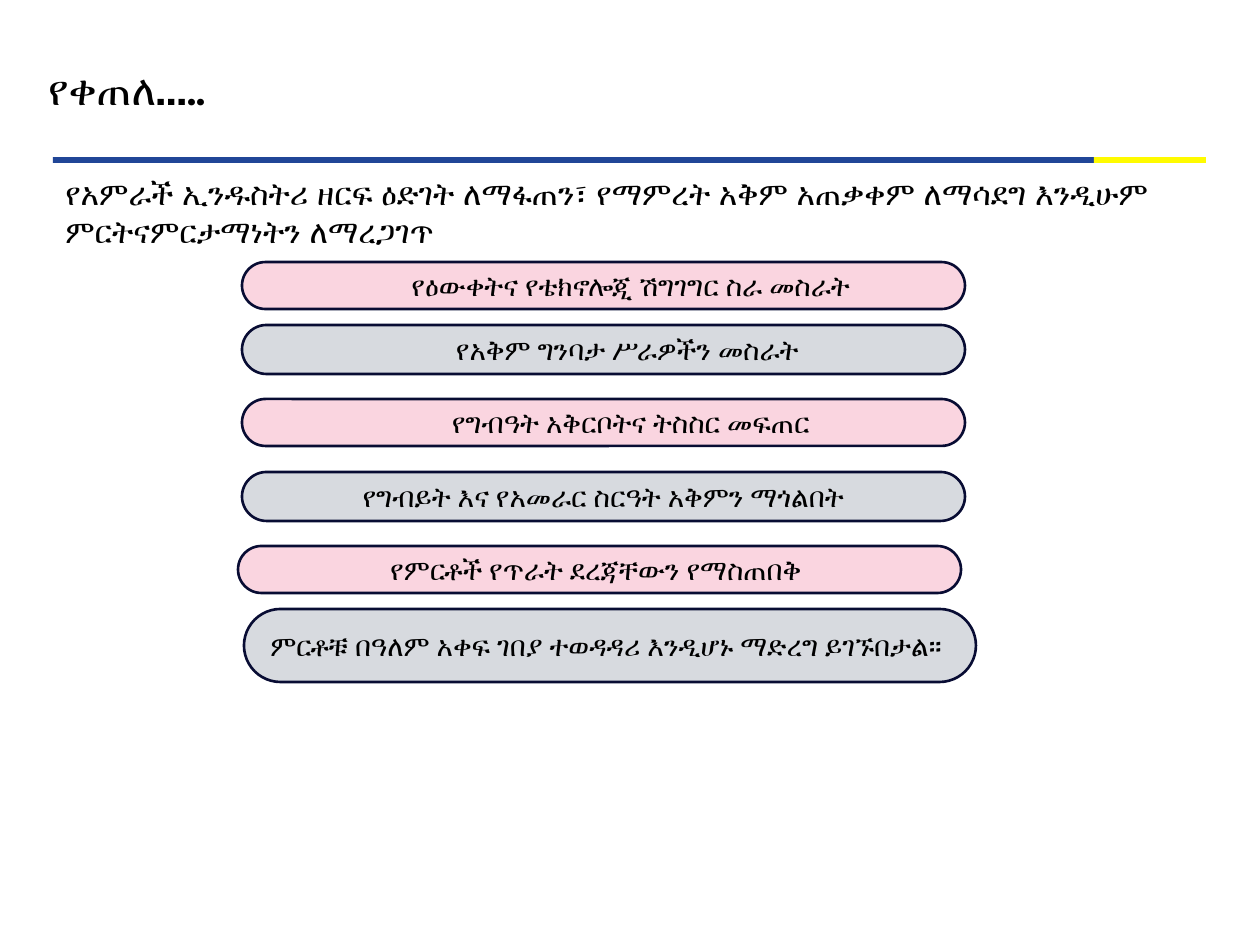
from dataclasses import dataclass

from pptx import Presentation
from pptx.dml.color import RGBColor
from pptx.enum.shapes import MSO_SHAPE
from pptx.enum.text import MSO_ANCHOR, PP_ALIGN
from pptx.util import Emu, Pt

EMU_PER_PX = 914400 / 126
RECTANGLE = MSO_SHAPE.RECTANGLE
ROUNDED = MSO_SHAPE.ROUNDED_RECTANGLE
MIDDLE = MSO_ANCHOR.MIDDLE
CENTER = PP_ALIGN.CENTER


@dataclass(frozen=True)
class Theme:
    ink: str = "000000"
    blue: str = "204697"
    yellow: str = "FFFB00"
    outline: str = "080C33"
    pill_fills: tuple = ("FAD5E0", "D7DADF")
    main_font: str = "Karla"
    condensed_font: str = "Roboto Condensed"
    title_size: int = 24
    heading_size: int = 18
    pill_size: int = 16
    outline_width: float = 1.5


THEME = Theme()

HEADING = [
    ("የ", THEME.main_font),
    ("አምራች ኢንዱስትሪ ", THEME.condensed_font),
    ("ዘር", THEME.main_font),
    ("ፍ ዕድገት ለማፋጠን፣ የማምረት አቅም አጠቃቀም ለማሳደግ እንዲሁም ", THEME.condensed_font),
    ("ምርትናምርታማነትን ለማረጋገጥ", THEME.main_font),
]

# text, left, top, width, height, left indent
PILLS = [
    (" የዕውቀትና የቴክኖሎጂ ሽግገግር ስራ መስራት", 242, 262, 723, 47, 48),
    ("የአቅም ግንባታ ሥራዎችን መስራት", 242, 325, 723, 49, 48),
    (" የግብዓት አቅርቦትና ትስስር መፍጠር", 242, 399, 723, 47, 48),
    (" የግብይት እና የአመራር ስርዓት አቅምን ማጎልበት ", 242, 472, 723, 49, 0),
    ("የምርቶች የጥራት ደረጃቸውን የማስጠበቅ ", 238, 546, 723, 47, 0),
    ("ምርቶቹ በዓለም አቀፍ ገበያ ተወዳዳሪ እንዲሆኑ ማድረግ ይገኙበታል፡፡ ", 244, 609, 732, 73, 0),
]


def px(length):
    return Emu(round(length * EMU_PER_PX))


def style_span(span, size, font=THEME.main_font, bold=False):
    span.font.name = font
    span.font.size = Pt(size)
    span.font.bold = bold
    span.font.color.rgb = RGBColor.from_string(THEME.ink)


def add_shape(page, kind, bounds, fill):
    shape = page.shapes.add_shape(kind, *map(px, bounds))
    shape.shadow.inherit = False
    shape.fill.solid()
    shape.fill.fore_color.rgb = RGBColor.from_string(fill)
    shape.line.fill.background()
    return shape


def add_text_box(page, bounds):
    box = page.shapes.add_textbox(*map(px, bounds))
    box.text_frame.word_wrap = True
    return box.text_frame


def add_title(page, text):
    frame = add_text_box(page, (48, 35, 1041, 113))
    frame.vertical_anchor = MIDDLE
    frame.margin_left = frame.margin_right = 0
    frame.margin_top = frame.margin_bottom = 0
    frame.text = text
    para = frame.paragraphs[0]
    para.line_spacing = 0.9
    style_span(para.runs[0], THEME.title_size, bold=True)


def add_heading(page, pieces):
    para = add_text_box(page, (53, 168, 1197, 89)).paragraphs[0]
    for text, font in pieces:
        span = para.add_run()
        span.text = text
        style_span(span, THEME.heading_size, font, bold=True)


def add_pill(page, text, bounds, indent, fill):
    pill = add_shape(page, ROUNDED, bounds, fill)
    pill.adjustments[0] = 0.5
    pill.line.color.rgb = RGBColor.from_string(THEME.outline)
    pill.line.width = Pt(THEME.outline_width)
    frame = pill.text_frame
    frame.word_wrap = True
    frame.vertical_anchor = MIDDLE
    frame.text = text
    para = frame.paragraphs[0]
    para.alignment = CENTER
    if indent:
        properties = para._p.get_or_add_pPr()
        properties.set("marL", str(px(indent)))
        properties.set("indent", "0")
    style_span(para.runs[0], THEME.pill_size)


def main():
    deck = Presentation()
    deck.slide_width, deck.slide_height = px(1260), px(945)
    page = deck.slides.add_slide(deck.slide_layouts[6])

    add_shape(page, RECTANGLE, (53, 157, 1041, 6), THEME.blue)
    add_shape(page, RECTANGLE, (1094, 157, 112, 6), THEME.yellow)
    add_title(page, "የቀጠለ…..")
    add_heading(page, HEADING)
    for index, (text, *bounds, indent) in enumerate(PILLS):
        add_pill(page, text, bounds, indent, THEME.pill_fills[index % 2])

    deck.save("out.pptx")


if __name__ == "__main__":
    main()
